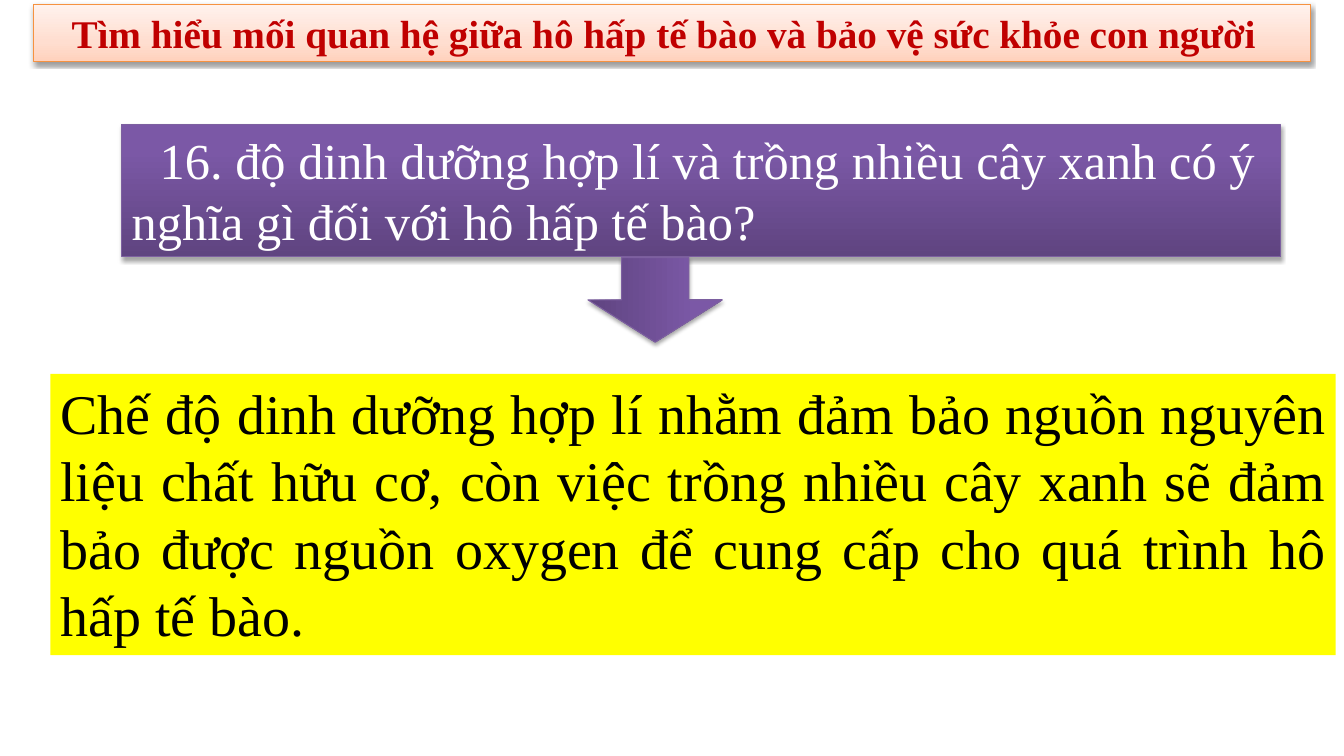
from lxml import etree
from pptx import Presentation
from pptx.dml.color import RGBColor
from pptx.enum.shapes import MSO_SHAPE
from pptx.enum.text import MSO_ANCHOR, PP_ALIGN
from pptx.oxml import parse_xml
from pptx.oxml.ns import nsdecls, qn
from pptx.util import Pt

RECTANGLE, ARROW = MSO_SHAPE.RECTANGLE, MSO_SHAPE.RIGHT_ARROW
TOP = MSO_ANCHOR.TOP
LEFT, JUSTIFY = PP_ALIGN.LEFT, PP_ALIGN.JUSTIFY
FONT = "Times New Roman"
PURPLE = [(0, "5F4480"), (80, "7B58A6"), (100, "7C57A8")]
PEACH = [(0, "FFD2BD"), (35, "FFDED0"), (100, "FFF2ED")]
PURPLE_EDGE, ORANGE_EDGE = "7D60A0", "F69240"


def color(hex_code):
    return RGBColor.from_string(hex_code)


def add_panel(slide, kind, box):
    panel = slide.shapes.add_shape(kind, *(Pt(length) for length in box))
    panel.shadow.inherit = False
    return panel


def style_raised(panel, stops, edge, shadow_opacity, shadow_distance):
    properties = panel._element.spPr
    gradient = parse_xml(
        f'<a:gradFill {nsdecls("a")} rotWithShape="1"><a:gsLst/>'
        '<a:lin ang="16200000" scaled="0"/></a:gradFill>')
    for position, hex_code in stops:
        stop = etree.SubElement(gradient[0], qn("a:gs"), pos=str(position * 1000))
        etree.SubElement(stop, qn("a:srgbClr"), val=hex_code)
    properties.find(qn("a:prstGeom")).addnext(gradient)
    panel.line.color.rgb = color(edge)
    panel.line.width = Pt(0.75)
    shadow = etree.SubElement(
        properties.find(qn("a:effectLst")), qn("a:outerShdw"),
        blurRad=str(Pt(3.1)), dist=str(Pt(shadow_distance)),
        dir="5400000", rotWithShape="0")
    shade = etree.SubElement(shadow, qn("a:srgbClr"), val="000000")
    etree.SubElement(shade, qn("a:alpha"), val=str(shadow_opacity * 1000))


def write(panel, wording, size, hex_code, alignment, bold=False, indent=0, space_after=0):
    frame = panel.text_frame
    frame.text = wording
    frame.word_wrap = True
    frame.vertical_anchor = TOP
    paragraph = frame.paragraphs[0]
    paragraph.alignment = alignment
    paragraph.space_after = Pt(space_after)
    if indent:
        paragraph._p.get_or_add_pPr().set("indent", str(Pt(indent)))
    font = paragraph.runs[0].font
    font.name, font.size, font.bold = FONT, Pt(size), bold
    font.color.rgb = color(hex_code)


def add_title(slide, box):
    title = add_panel(slide, RECTANGLE, box)
    style_raised(title, PEACH, ORANGE_EDGE, 38, 1.6)
    write(title, "Tìm hiểu mối quan hệ giữa hô hấp tế bào và bảo vệ sức khỏe con người",
          28, "C00000", JUSTIFY, bold=True, indent=20, space_after=5)


def add_question(slide, box):
    question = add_panel(slide, RECTANGLE, box)
    style_raised(question, PURPLE, PURPLE_EDGE, 35, 1.8)
    write(question, "16. độ dinh dưỡng hợp lí và trồng nhiều cây xanh có ý nghĩa gì "
          "đối với hô hấp tế bào?", 36, "FFFFFF", LEFT, indent=20, space_after=5)


def add_down_arrow(slide, box):
    left, top, width, height = box
    turned_box = (left + (width - height) / 2, top + (height - width) / 2, height, width)
    arrow = add_panel(slide, ARROW, turned_box)
    arrow.rotation = 90
    style_raised(arrow, PURPLE, PURPLE_EDGE, 35, 1.8)


def add_answer(slide, box):
    answer = add_panel(slide, RECTANGLE, box)
    answer.fill.solid()
    answer.fill.fore_color.rgb = color("FFFF00")
    answer.line.fill.background()
    write(answer, "Chế độ dinh dưỡng hợp lí nhằm đảm bảo nguồn nguyên liệu chất hữu cơ, "
          "còn việc trồng nhiều cây xanh sẽ đảm bảo được nguồn oxygen để cung cấp cho "
          "quá trình hô hấp tế bào.", 40, "000000", JUSTIFY)


def main():
    deck = Presentation()
    deck.slide_width, deck.slide_height = Pt(960), Pt(540)
    slide = deck.slides.add_slide(deck.slide_layouts[6])
    add_question(slide, (87, 89, 828, 94.5))
    add_answer(slide, (36, 267, 918, 201))
    add_down_arrow(slide, (420, 184, 96, 60.5))
    add_title(slide, (24, 3, 912, 41))
    deck.save("out.pptx")


if __name__ == "__main__":
    main()
